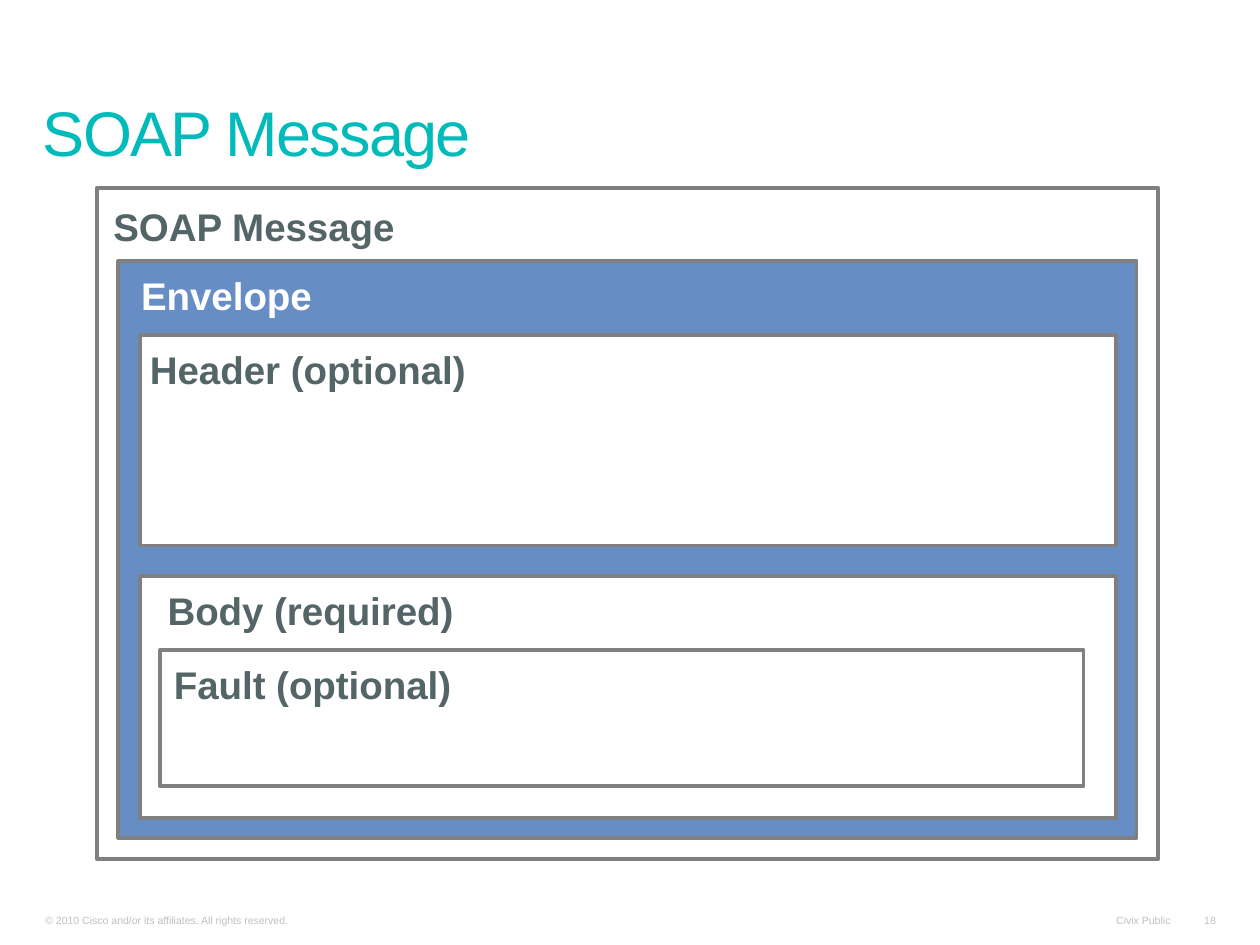
from dataclasses import dataclass
from typing import Optional

from pptx import Presentation
from pptx.dml.color import RGBColor
from pptx.enum.shapes import MSO_SHAPE
from pptx.enum.text import MSO_ANCHOR, MSO_AUTO_SIZE, PP_ALIGN
from pptx.util import Inches, Pt

RECT = MSO_SHAPE.RECTANGLE
TOP, BOTTOM = MSO_ANCHOR.TOP, MSO_ANCHOR.BOTTOM
LEFT, RIGHT = PP_ALIGN.LEFT, PP_ALIGN.RIGHT
NO_FIT = MSO_AUTO_SIZE.NONE
TITLE_ONLY = 5


@dataclass(frozen=True)
class Theme:
    font: str = "Arial"
    title: str = "01BBBB"
    label: str = "546568"
    white: str = "FFFFFF"
    envelope: str = "678DC5"
    outline: str = "808080"
    footer: str = "C0C0C0"
    title_size: float = 36
    label_size: float = 22
    footer_size: float = 6
    line_width: float = 2.25


@dataclass(frozen=True)
class Part:
    name: str
    left: float
    top: float
    width: float
    height: float
    label_dx: float
    label_width: float
    fill: Optional[str] = None
    color: str = Theme.label
    label_dy: float = 0.05


@dataclass(frozen=True)
class Footer:
    text: str
    left: float
    width: float
    align: PP_ALIGN = RIGHT
    wrap: bool = False


THEME = Theme()
LABEL_HEIGHT = 0.46
FOOTER_TOP, FOOTER_HEIGHT = 7.2, 0.19

PARTS = [
    Part("SOAP Message", 0.77, 1.49, 8.42, 5.33, 0.04, 2.42, label_dy=0.08),
    Part("Envelope", 0.94, 2.07, 8.08, 4.58, 0.09, 1.54, THEME.envelope, THEME.white),
    Part("Header (optional)", 1.11, 2.66, 7.75, 1.67, -0.01, 2.7, THEME.white),
    Part("Body (required)", 1.11, 4.57, 7.75, 1.92, 0.13, 2.46, THEME.white),
    Part("Fault (optional)", 1.27, 5.16, 7.33, 1.08, 0.02, 2.4),
]

FOOTERS = [
    Footer("© 2010 Cisco and/or its affiliates. All rights reserved.", 0.27, 3.74, LEFT, True),
    Footer("Civix Public", 8.73, 0.65),
    Footer("18", 9.46, 0.28),
]


def apply(target, values: dict) -> None:
    for name, value in values.items():
        setattr(target, name, value)


def write(sp, text: str, size: float, color: str, bold: bool = False,
          align: PP_ALIGN = LEFT, anchor: MSO_ANCHOR = TOP,
          wrap: bool = False, inset: float = 0.04):
    tf = sp.text_frame
    apply(tf, {
        "auto_size": NO_FIT, "word_wrap": wrap, "vertical_anchor": anchor,
        "margin_left": Inches(0.09), "margin_right": Inches(0.09),
        "margin_top": Inches(inset), "margin_bottom": Inches(inset),
    })
    p = tf.paragraphs[0]
    p.alignment = align
    r = p.add_run()
    r.text = text
    apply(r.font, {"name": THEME.font, "size": Pt(size), "bold": bold})
    r.font.color.rgb = RGBColor.from_string(color)
    return p, r


def add_title(s, text: str) -> None:
    sp = s.shapes.title
    apply(sp, {"left": Inches(0.25), "top": Inches(0.47),
               "width": Inches(9.39), "height": Inches(0.92)})
    p, r = write(sp, text, THEME.title_size, THEME.title,
                 anchor=BOTTOM, wrap=True, inset=0.05)
    p.line_spacing = 0.8
    r.font._element.set("spc", "-100")


def add_part(s, part: Part) -> None:
    sp = s.shapes.add_shape(RECT, Inches(part.left), Inches(part.top),
                            Inches(part.width), Inches(part.height))
    sp.shadow.inherit = False
    if part.fill:
        sp.fill.solid()
        sp.fill.fore_color.rgb = RGBColor.from_string(part.fill)
    else:
        sp.fill.background()
    sp.line.color.rgb = RGBColor.from_string(THEME.outline)
    sp.line.width = Pt(THEME.line_width)
    label = s.shapes.add_textbox(
        Inches(part.left + part.label_dx), Inches(part.top + part.label_dy),
        Inches(part.label_width), Inches(LABEL_HEIGHT))
    write(label, part.name, THEME.label_size, part.color, bold=True)


def add_footer(s, footer: Footer) -> None:
    sp = s.shapes.add_textbox(Inches(footer.left), Inches(FOOTER_TOP),
                              Inches(footer.width), Inches(FOOTER_HEIGHT))
    write(sp, footer.text, THEME.footer_size, THEME.footer,
          align=footer.align, anchor=BOTTOM, wrap=footer.wrap)


def main() -> None:
    prs = Presentation()
    apply(prs, {"slide_width": Inches(10), "slide_height": Inches(7.5)})
    s = prs.slides.add_slide(prs.slide_layouts[TITLE_ONLY])
    add_title(s, "SOAP Message")
    for part in PARTS:
        add_part(s, part)
    for footer in FOOTERS:
        add_footer(s, footer)
    prs.save("out.pptx")


if __name__ == "__main__":
    main()
